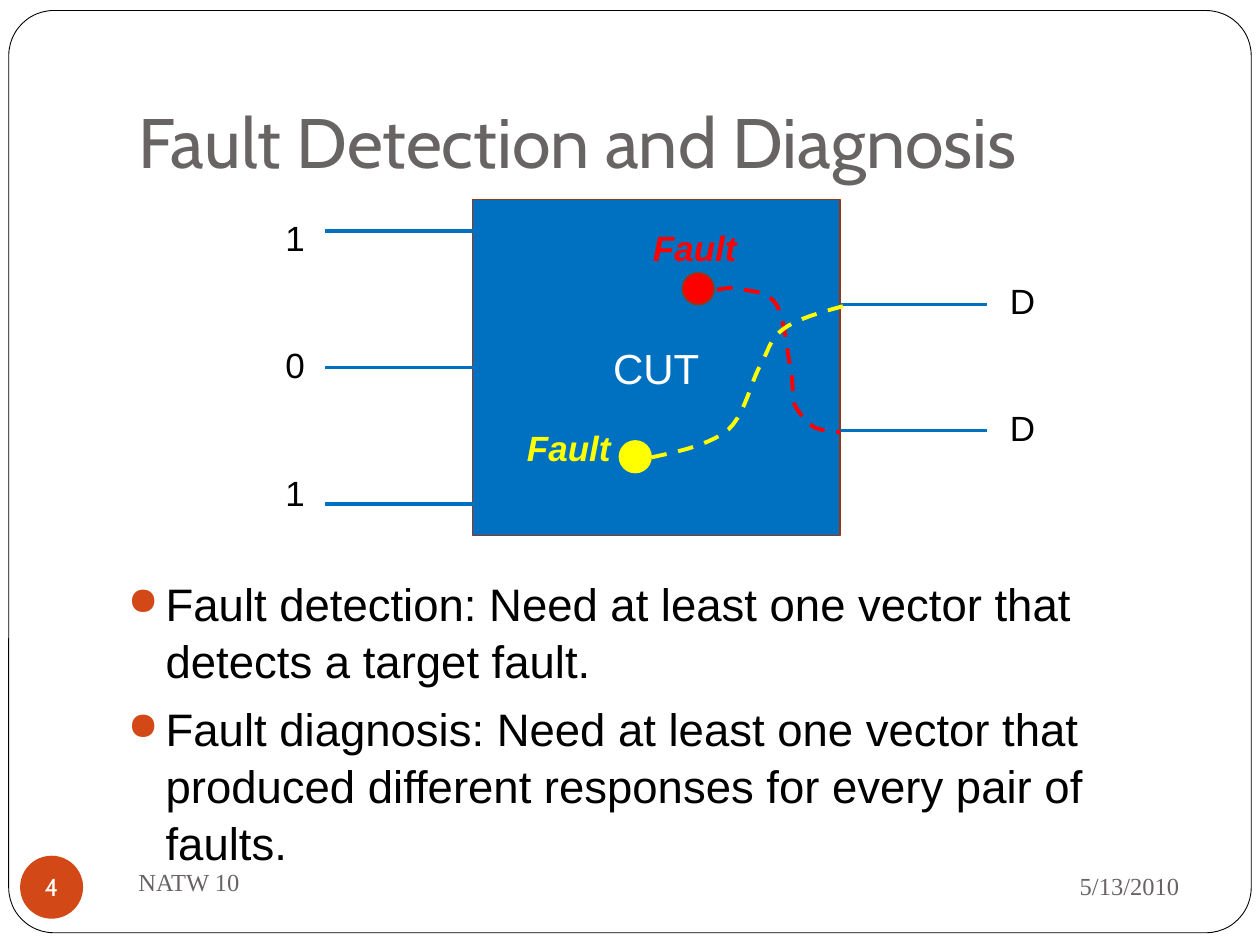
from pptx import Presentation
from pptx.dml.color import RGBColor
from pptx.enum.dml import MSO_LINE
from pptx.enum.shapes import MSO_CONNECTOR, MSO_SHAPE as Preset
from pptx.enum.text import MSO_ANCHOR as Anchor, PP_ALIGN as Align
from pptx.oxml.ns import qn
from pptx.util import Pt
from lxml.etree import SubElement

BLUE, RED, YELLOW, RUST, ORANGE = "0070C0", "FF0000", "FFFF00", "9C3511", "D34817"
WHITE, BLACK, GREY = "FFFFFF", "000000", "696464"
TITLE = {"name": "Cabin", "size": Pt(40), "color": GREY}
FOOTER = {"name": "Times New Roman", "size": Pt(14), "color": GREY}
NUMBER = {"name": "Cabin", "size": Pt(14), "color": WHITE}
BODY = {"name": "Arial", "size": Pt(26), "color": BLACK}
BLOCK = {"name": "Arial", "size": Pt(24), "color": WHITE}
SIGNAL = {"name": "Arial", "size": Pt(20), "color": BLACK}
FAULT = {**SIGNAL, "bold": True, "italic": True}

RED_PATH = [(409.7, 165.6),
            (414.7, 164.9), (419.8, 163.4), (425.5, 165.6),
            (431.3, 167), (439.2, 166.3), (444.2, 175),
            (448.6, 182.9), (450, 203.8), (452.2, 213.1),
            (453.6, 223.2), (452.2, 226.8), (454.3, 231.8),
            (457.2, 236.9), (460.8, 241.2), (465.1, 244.1),
            (469.4, 246.2), (474.5, 246.2), (480.2, 247)]
YELLOW_PATH = [(372.2, 261.4),
               (388.8, 257.8), (405.4, 254.2), (416.2, 245.5),
               (426.2, 236.2), (429.1, 217.4), (434.9, 208.1),
               (439.9, 198.7), (439.9, 193.7), (447.8, 187.9),
               (455.8, 182.2), (468.7, 178.6), (481.7, 175)]


def color(value):
    """Turn a hex string into a colour."""
    return RGBColor.from_string(value)


def apply_format(target, values):
    """Set every attribute in a dict, treating colour as a hex string."""
    for name, value in values.items():
        if name == "color":
            target.color.rgb = color(value)
        else:
            setattr(target, name, value)


def write(box, lines, font, frame=None, para=None):
    """Fill a shape with one formatted paragraph per line."""
    apply_format(box.text_frame, {"word_wrap": True, **(frame or {})})
    for index, line in enumerate(lines):
        paragraph = box.text_frame.paragraphs[0] if index == 0 else box.text_frame.add_paragraph()
        apply_format(paragraph, para or {})
        span = paragraph.add_run()
        span.text = line
        apply_format(span.font, font)


def add_text(page, bounds, lines, font, frame=None, para=None):
    """Add a text box."""
    box = page.shapes.add_textbox(*map(Pt, bounds))
    write(box, lines, font, frame, para)
    return box


def add_shape(page, preset, bounds, fill, line=None, width=1):
    """Add a flat preset shape."""
    shape = page.shapes.add_shape(preset, *map(Pt, bounds))
    shape.shadow.inherit = False
    shape.fill.solid()
    shape.fill.fore_color.rgb = color(fill)
    if line:
        apply_format(shape.line, {"color": line, "width": Pt(width)})
    else:
        shape.line.fill.background()
    return shape


def add_wire(page, left, right, y):
    """Add a horizontal signal wire."""
    wire = page.shapes.add_connector(MSO_CONNECTOR.STRAIGHT, Pt(left), Pt(y), Pt(right), Pt(y))
    apply_format(wire.line, {"color": BLUE, "width": Pt(2.25)})
    SubElement(wire._element.spPr, qn("a:effectLst"))


def bezier_points(path, steps=10):
    """Sample a chain of cubic curves."""
    points = []
    for start in range(0, len(path) - 1, 3):
        corners = path[start:start + 4]
        for step in range(1, steps + 1):
            t = step / steps
            weights = ((1 - t) ** 3, 3 * t * (1 - t) ** 2, 3 * t * t * (1 - t), t ** 3)
            points.append(tuple(Pt(sum(w * corner[axis] for w, corner in zip(weights, corners)))
                                for axis in (0, 1)))
    return points


def add_fault_path(page, path, line):
    """Add a dashed curve from a fault to an output."""
    builder = page.shapes.build_freeform(*map(Pt, path[0]))
    builder.add_line_segments(bezier_points(path), close=False)
    curve = builder.convert_to_shape()
    curve.shadow.inherit = False
    curve.fill.background()
    apply_format(curve.line, {"color": line, "width": Pt(2.25), "dash_style": MSO_LINE.DASH})


def add_bullets(box):
    """Give each paragraph a hanging round bullet."""
    for paragraph in box.text_frame.paragraphs:
        props = paragraph._p.get_or_add_pPr()
        props.set("marL", str(Pt(21.6)))
        props.set("indent", str(-Pt(21.6)))
        SubElement(SubElement(props, qn("a:buClr")), qn("a:srgbClr")).set("val", ORANGE)
        SubElement(props, qn("a:buSzPct")).set("val", "85000")
        SubElement(props, qn("a:buChar")).set("char", "●")


def add_frame(page):
    """Add the rounded border, title, footers and page number."""
    border = add_shape(page, Preset.ROUNDED_RECTANGLE, (5, 6, 710, 527), WHITE, BLACK, 0.5)
    border.adjustments[0] = 0.049
    add_text(page, (72, 21.6, 612, 90), ["Fault Detection and Diagnosis"], TITLE,
             {"vertical_anchor": Anchor.BOTTOM, "margin_bottom": Pt(7.2)})
    middle = {"vertical_anchor": Anchor.MIDDLE}
    add_text(page, (486, 487.5, 195, 37.5), ["5/13/2010"], FOOTER, middle, {"alignment": Align.RIGHT})
    add_text(page, (72, 486, 312, 36), ["NATW 10"], FOOTER, middle)
    badge = add_shape(page, Preset.OVAL, (11.5, 489, 36, 36), ORANGE)
    margins = {f"margin_{side}": 0 for side in ("left", "top", "right", "bottom")}
    write(badge, ["4"], NUMBER, {**middle, **margins, "word_wrap": False}, {"alignment": Align.CENTER})


def add_circuit(page):
    """Add the circuit block with its signals and two faults."""
    block = add_shape(page, Preset.RECTANGLE, (270, 114, 210, 192), BLUE, RUST)
    write(block, ["CUT"], BLOCK, {"vertical_anchor": Anchor.MIDDLE}, {"alignment": Align.CENTER})
    for y in (132, 210, 288):
        add_wire(page, 186, 270, y)
    for y in (174, 246):
        add_wire(page, 480, 564, y)
    for bounds, signals in (((156, 120, 26, 177), "101"), ((570, 156, 30, 104), "DD")):
        box = add_text(page, bounds, signals, SIGNAL, {"word_wrap": False})
        for paragraph in box.text_frame.paragraphs[1:]:
            paragraph.space_before = Pt(49)
    faults = (((390, 156), (366, 126), RED, RUST, RED_PATH),
              ((354, 252), (294, 240), YELLOW, YELLOW, YELLOW_PATH))
    for dot, label, fill, line, path in faults:
        add_shape(page, Preset.OVAL, (*dot, 18, 18), fill, line)
        add_fault_path(page, path, fill)
        add_text(page, (*label, 63, 31.5), ["Fault"], {**FAULT, "color": fill})


def main():
    """Build and save the slide."""
    deck = Presentation()
    deck.slide_width, deck.slide_height = Pt(720), Pt(540)
    page = deck.slides.add_slide(deck.slide_layouts[6])
    add_frame(page)
    body = add_text(page, (66, 324, 612, 162), [
        "Fault detection: Need at least one vector that detects a target fault.",
        "Fault diagnosis: Need at least one vector that produced different responses"
        " for every pair of faults.",
    ], BODY, para={"space_before": Pt(5.8), "line_spacing": 1.05})
    add_bullets(body)
    add_circuit(page)
    deck.save("out.pptx")


if __name__ == "__main__":
    main()
